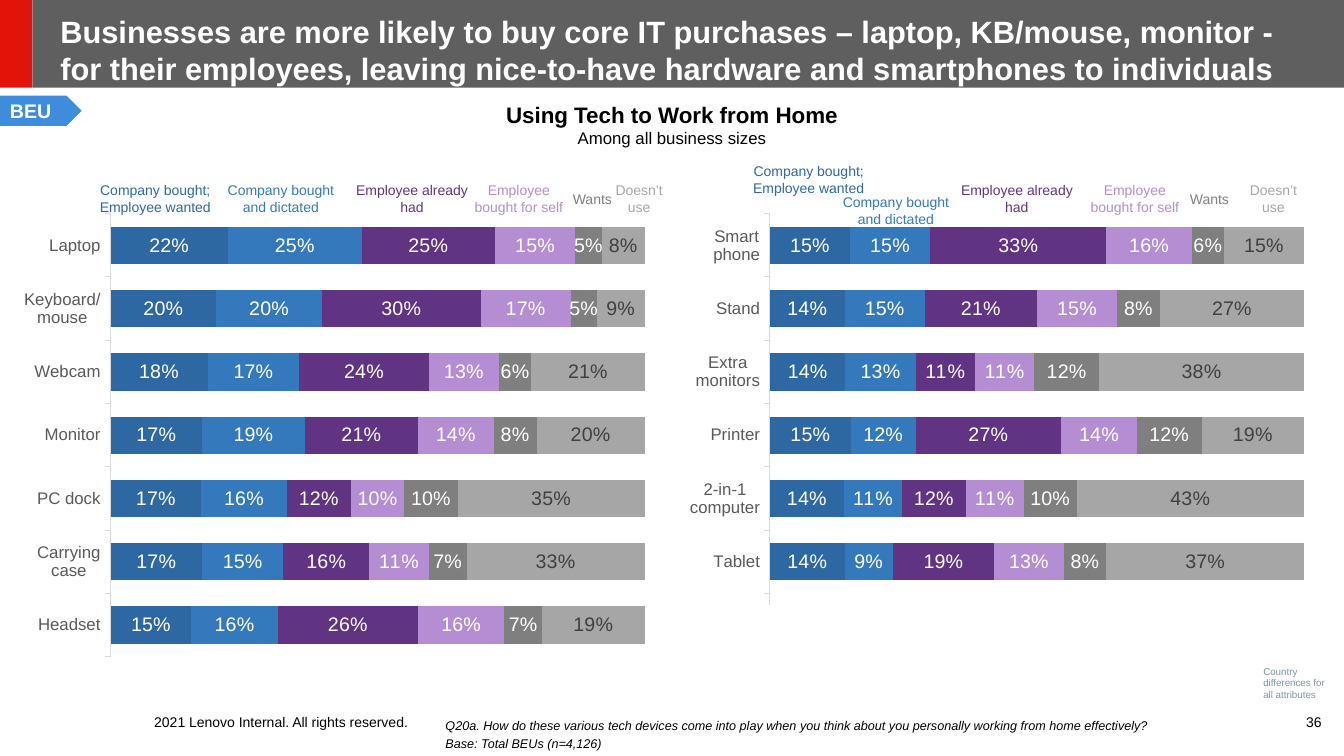
from lxml import etree
from pptx import Presentation
from pptx.chart.data import CategoryChartData
from pptx.dml.color import RGBColor
from pptx.enum.chart import XL_CHART_TYPE, XL_TICK_LABEL_POSITION, XL_TICK_MARK
from pptx.enum.shapes import MSO_SHAPE
from pptx.enum.text import MSO_ANCHOR, PP_ALIGN
from pptx.oxml.ns import qn
from pptx.util import Inches, Pt

BAR = XL_CHART_TYPE.BAR_STACKED_100
OUT, NONE = XL_TICK_MARK.OUTSIDE, XL_TICK_MARK.NONE
LOW = XL_TICK_LABEL_POSITION.LOW
RECT, TAG = MSO_SHAPE.RECTANGLE, MSO_SHAPE.PENTAGON
TOP, MID, BASE = MSO_ANCHOR.TOP, MSO_ANCHOR.MIDDLE, MSO_ANCHOR.BOTTOM
LEFT, MIDST = PP_ALIGN.LEFT, PP_ALIGN.CENTER

COLORS = {
    "band": "5F5F5F", "red": "E1140A", "tag": "3E8DDD", "white": "FFFFFF",
    "black": "000000", "note": "7E96AA", "axis": "D9D9D9", "label": "595959",
    "dark": "404040", "wanted": "2E68A3", "dictated": "3579BD",
    "had": "613483", "self": "B48DD2", "wants": "7F7F7F", "unused": "A6A6A6",
}
WIDE = (0.1, 0.05)
SLIM = (0.02, 0.05)
FLAT = (0, 0)

# colour, heading lines, heading width
GROUPS = [
    ("wanted", ["Company bought; Employee wanted"], 1.46),
    ("dictated", ["Company bought", "and dictated"], 1.19),
    ("had", ["Employee already had"], 1.19),
    ("self", ["Employee", "bought for self"], 1.19),
    ("wants", ["Wants"], 1.19),
    ("unused", ["Doesn’t", "use"], 0.76),
]

# device and its percentages, in the order of GROUPS
CORE = [
    ("Laptop", (22, 25, 25, 15, 5, 8)),
    ("Keyboard/ mouse", (20, 20, 30, 17, 5, 9)),
    ("Webcam", (18, 17, 24, 13, 6, 21)),
    ("Monitor", (17, 19, 21, 14, 8, 20)),
    ("PC dock", (17, 16, 12, 10, 10, 35)),
    ("Carrying case", (17, 15, 16, 11, 7, 33)),
    ("Headset", (15, 16, 26, 16, 7, 19)),
]
EXTRA = [
    ("Smart phone", (15, 15, 33, 16, 6, 15)),
    ("Stand", (14, 15, 21, 15, 8, 27)),
    ("Extra monitors", (14, 13, 11, 11, 12, 38)),
    ("Printer", (15, 12, 27, 14, 12, 19)),
    ("2-in-1 computer", (14, 11, 12, 11, 10, 43)),
    ("Tablet", (14, 9, 19, 13, 8, 37)),
    ("", (None,) * 6),
]

# chart left, rows, heading lefts, heading (top, height) where not the usual
PANELS = [
    (0.16, CORE, (0.81, 2.19, 3.49, 4.55, 5.28, 5.96), {}),
    (6.7, EXTRA, (7.29, 8.29, 9.49, 10.66, 11.4, 12.25),
     {"wanted": (1.59, 0.38), "dictated": (1.94, 0.3)}),
]


class Deck:
    def __init__(self, font):
        self.font = font
        self.prs = Presentation()
        self.prs.slide_width = Inches(13.33)
        self.prs.slide_height = Inches(7.5)
        self.slide = self.prs.slides.add_slide(self.prs.slide_layouts[6])

    def tint(self, name):
        return RGBColor.from_string(COLORS[name])

    def style(self, font, size, color, bold=False, slant=False):
        font.name, font.size = self.font, Pt(size)
        font.bold, font.italic = bold, slant
        font.color.rgb = self.tint(color)

    def block(self, box, color, kind=RECT):
        shape = self.slide.shapes.add_shape(kind, *map(Inches, box))
        shape.shadow.inherit = False
        shape.fill.solid()
        shape.fill.fore_color.rgb = self.tint(color)
        shape.line.fill.background()
        return shape

    def label(self, shape, lines, size, color, align=LEFT, anchor=MID,
              inset=SLIM, gap=0, bold=False, slant=False):
        """Fill a shape; a line is a text or a (text, size, bold) tuple."""
        frame = shape.text_frame
        frame.word_wrap = True
        frame.vertical_anchor = anchor
        frame.margin_left = frame.margin_right = Inches(inset[0])
        frame.margin_top = frame.margin_bottom = Inches(inset[1])
        for i, line in enumerate(lines):
            if isinstance(line, str):
                line = (line, size, bold)
            para = frame.add_paragraph() if i else frame.paragraphs[0]
            para.alignment = align
            if i and gap:
                para.space_before = Pt(gap)
            run = para.add_run()
            run.text = line[0]
            self.style(run.font, line[1], color, line[2], slant)

    def text(self, box, lines, size, color="black", **look):
        shape = self.slide.shapes.add_textbox(*map(Inches, box))
        self.label(shape, lines, size, color, **look)

    def chart(self, box, rows):
        data = CategoryChartData(number_format="0%")
        data.categories = [name for name, _ in rows]
        for i in range(len(GROUPS)):
            data.add_series(f"Series {i + 1}", [
                None if vals[i] is None else vals[i] / 100
                for _, vals in rows])
        frame = self.slide.shapes.add_chart(BAR, *map(Inches, box), data)
        chart = frame.chart
        chart.has_legend = chart.has_title = False
        self.style(chart.font, 10, "black")
        plot = chart.plots[0]
        plot.gap_width, plot.overlap = 70, 100
        plot.vary_by_categories = False

        axis = chart.category_axis
        axis.reverse_order = True
        axis.major_tick_mark, axis.minor_tick_mark = OUT, NONE
        axis.tick_label_position = LOW
        axis.format.line.color.rgb = self.tint("axis")
        axis.format.line.width = Pt(0.75)
        self.style(axis.tick_labels.font, 12, "label")
        scale = chart.value_axis
        scale.has_major_gridlines = scale.visible = False
        scale.minimum_scale, scale.maximum_scale = 0, 1

        for series, (color, _, _) in zip(plot.series, GROUPS):
            series.format.fill.solid()
            series.format.fill.fore_color.rgb = self.tint(color)
            labels = series.data_labels
            labels.show_value = True
            labels.number_format = "0%"
            labels.number_format_is_linked = False
            self.style(labels.font, 14,
                       "dark" if color == "unused" else "white")
        self.place(chart, 0.148, 0.032, 0.837, 0.935)

    def place(self, chart, x, y, w, h):
        """Fix the inner plot area, as shares of the chart's size."""
        area = chart.plots[0]._element.getparent()
        for old in area.findall(qn("c:layout")):
            area.remove(old)
        layout = etree.Element(qn("c:layout"))
        area.insert(0, layout)
        manual = etree.SubElement(layout, qn("c:manualLayout"))
        for key, val in (("layoutTarget", "inner"), ("xMode", "edge"),
                         ("yMode", "edge"), ("x", x), ("y", y),
                         ("w", w), ("h", h)):
            etree.SubElement(manual, qn("c:" + key)).set("val", str(val))


def main():
    deck = Deck("Arial")
    deck.block((0.32, 0, 13.01, 0.87), "band")
    deck.block((0, 0, 0.32, 0.87), "red")
    deck.text((0.6, 0.18, 12.43, 0.62), [
        "Businesses are more likely to buy core IT purchases – laptop, "
        "KB/mouse, monitor - for their employees, leaving nice-to-have "
        "hardware and smartphones to individuals"],
        22, "white", inset=FLAT, bold=True)
    deck.text((3.07, 0.95, 7.19, 0.57), [
        ("Using Tech to Work from Home", 16, True),
        ("Among all business sizes", 12, False)],
        12, align=MIDST, anchor=TOP, inset=WIDE)
    tag = deck.block((0, 0.95, 0.81, 0.3), "tag", TAG)
    deck.label(tag, ["BEU"], 14, "white", inset=WIDE, bold=True)

    for left, rows, spots, moved in PANELS:
        deck.chart((left, 1.97, 6.33, 4.7), rows)
        for spot, (color, lines, width) in zip(spots, GROUPS):
            top, height = moved.get(color, (1.78, 0.38))
            deck.text((spot, top, width, height), lines, 10, color,
                      align=MIDST)
    deck.block((7.5, 6, 0.21, 0.62), "white")

    deck.text((12.51, 6.61, 0.77, 0.33),
              ["Country differences for all attributes"], 7, "note")
    deck.text((1.53, 7.08, 2.64, 0.17),
              ["2021 Lenovo Internal. All rights reserved."], 10, inset=FLAT)
    deck.text((4.32, 6.88, 7.39, 0.62), [
        "Q20a. How do these various tech devices come into play when you "
        "think about you personally working from home effectively?",
        "Base: Total BEUs (n=4,126)"],
        9, anchor=BASE, inset=WIDE, gap=1.8, slant=True)
    deck.text((12.79, 7.08, 0.48, 0.17), ["36"], 10, align=MIDST, inset=FLAT)
    deck.prs.save("out.pptx")


if __name__ == "__main__":
    main()
